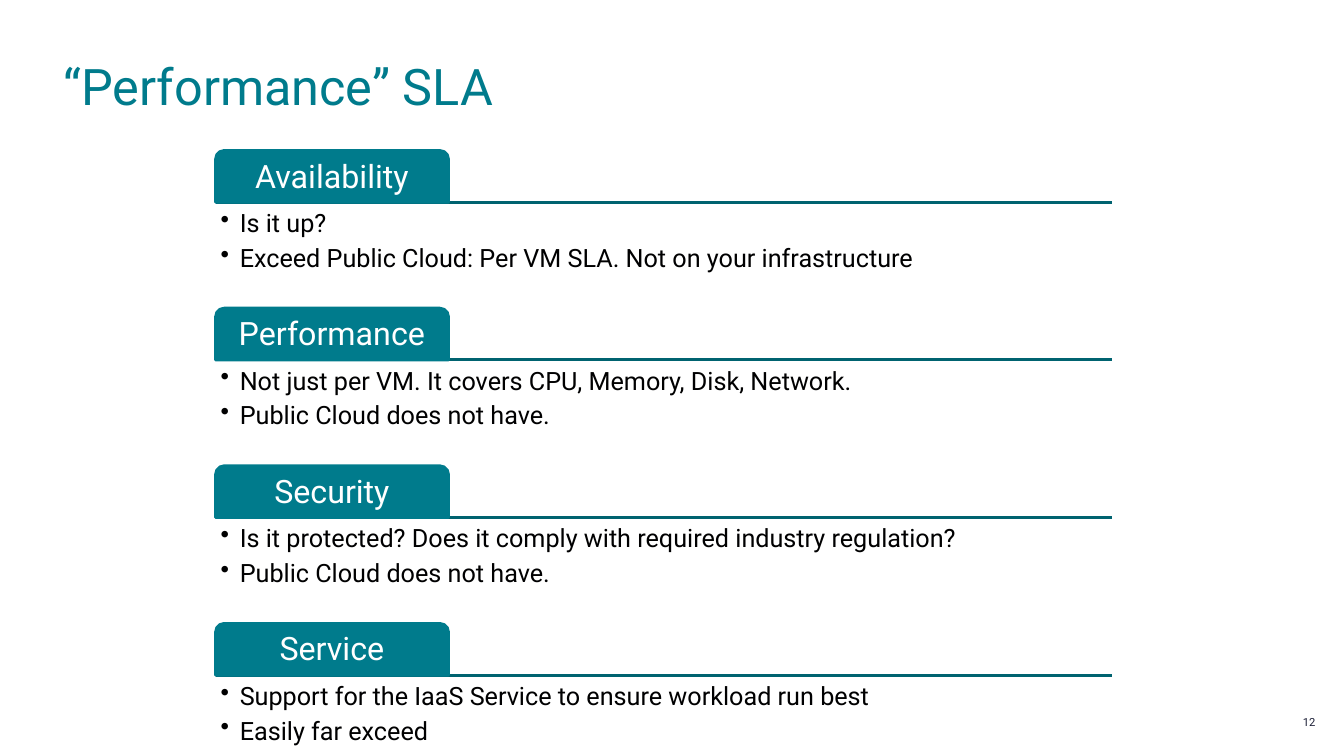
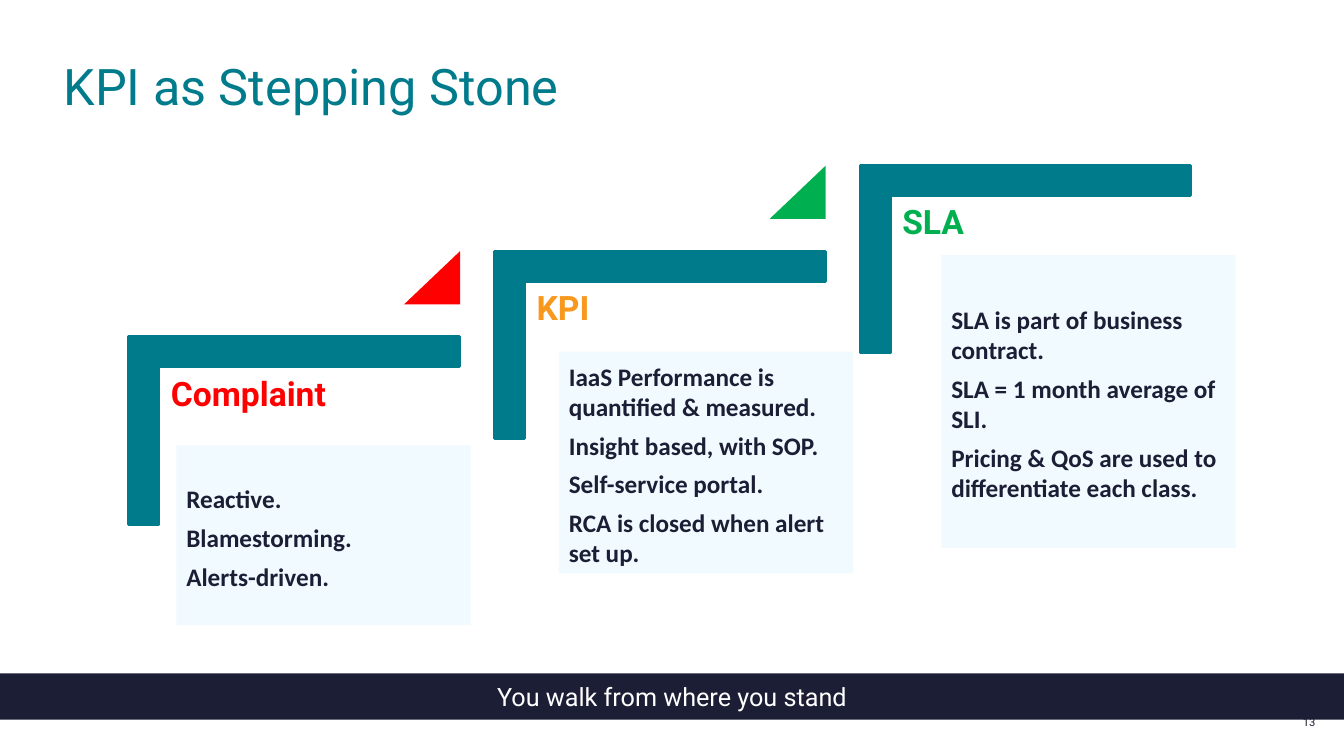
from lxml import etree
from pptx import Presentation
from pptx.dml import color
from pptx.enum import shapes, text
from pptx.oxml import ns
from pptx.util import Pt

COLORS = {
    "paper": "FFFFFF", "ink": "1B1E35", "body": "000001", "teal": "007B8C",
    "rule": "006370", "red": "FF0000", "orange": "F8981D", "green": "00B050",
    "card": "B5E6FF",
}
SLIDE_W, SLIDE_H = 960, 540
FORMS = shapes.MSO_SHAPE
ALIGN = text.PP_ALIGN
ANCHOR = text.MSO_ANCHOR

SECTIONS = [
    ("Availability", ["Is it up?",
                      "Exceed Public Cloud: Per VM SLA. Not on your infrastructure"]),
    ("Performance", ["Not just per VM. It covers CPU, Memory, Disk, Network.",
                     "Public Cloud does not have."]),
    ("Security", ["Is it protected? Does it comply with required industry regulation?",
                  "Public Cloud does not have."]),
    ("Service", ["Support for the IaaS Service to ensure workload run best",
                 "Easily far exceed"]),
]
STEPS = [
    ("Complaint", "red", (126, 318.2, 210.2, 128.4),
     ["Reactive.", "Blamestorming.", "Alerts-driven."]),
    ("KPI", "orange", (399.2, 251.2, 210.2, 158.4),
     ["IaaS Performance is quantified & measured.", "Insight based, with SOP.",
      "Self-service portal.", "RCA is closed when alert set up."]),
    ("SLA", "green", (672.4, 182.2, 210.2, 209.2),
     ["SLA is part of business contract.", "SLA = 1 month average of SLI.",
      "Pricing & QoS are used to differentiate each class."]),
]
ARROWS = ["red", "green"]


def rgb(name):
    """Return the named colour."""
    return color.RGBColor.from_string(COLORS[name])


def add_bullet(paragraph, indent):
    """Give the paragraph a hanging round bullet."""
    props = paragraph._p.get_or_add_pPr()
    props.set("marL", str(Pt(indent)))
    props.set("indent", str(-Pt(indent)))
    etree.SubElement(props, ns.qn("a:buChar")).set("char", "•")


def write(holder, lines, size=18, tone="ink", font="Roboto", bold=False,
          align=ALIGN.LEFT, anchor=ANCHOR.TOP, insets=(0, 0, 0, 0), wrap=True,
          spacing=None, before=0, after=0, bullet=0):
    """Fill a shape or text box with formatted paragraphs."""
    frame = holder.text_frame
    frame.word_wrap = wrap
    frame.vertical_anchor = anchor
    (frame.margin_left, frame.margin_top,
     frame.margin_right, frame.margin_bottom) = map(Pt, insets)
    for index, line in enumerate(lines):
        paragraph = frame.add_paragraph() if index else frame.paragraphs[0]
        paragraph.text = line
        paragraph.alignment = align
        if spacing:
            paragraph.line_spacing = spacing
        if index and before:
            paragraph.space_before = Pt(before)
        if after:
            paragraph.space_after = Pt(after)
        if bullet:
            add_bullet(paragraph, bullet)
        paragraph.font.size = Pt(size)
        paragraph.font.name = font
        paragraph.font.bold = bold
        paragraph.font.color.rgb = rgb(tone)


def add_text(slide, box, lines, **style):
    """Add a text box."""
    write(slide.shapes.add_textbox(*map(Pt, box)), lines, **style)


def add_form(slide, form, box, fill, outline=None, adjust=(), alpha=None):
    """Add a flat preset shape and return it."""
    shape = slide.shapes.add_shape(form, *map(Pt, box))
    shape.shadow.inherit = False
    shape.fill.solid()
    shape.fill.fore_color.rgb = rgb(fill)
    if alpha:
        tint = shape.fill._xPr.find(".//" + ns.qn("a:srgbClr"))
        etree.SubElement(tint, ns.qn("a:alpha")).set("val", str(alpha * 1000))
    if outline:
        shape.line.color.rgb = rgb(outline)
        shape.line.width = Pt(2)
    else:
        shape.line.fill.background()
    for index, value in enumerate(adjust):
        shape.adjustments[index] = value
    return shape


def add_rule(slide, left, top, width):
    """Draw a horizontal rule."""
    rule = slide.shapes.add_connector(
        shapes.MSO_CONNECTOR.STRAIGHT, Pt(left), Pt(top), Pt(left + width), Pt(top))
    rule.line.color.rgb = rgb("rule")
    rule.line.width = Pt(2)
    etree.SubElement(rule._element.spPr, ns.qn("a:effectLst"))


def start_slide(deck, title, number):
    """Add a blank slide with its page number and title."""
    slide = deck.slides.add_slide(deck.slide_layouts[6])
    slide.background.fill.solid()
    slide.background.fill.fore_color.rgb = rgb("paper")
    add_text(slide, (905, 509, 34.6, 14.4), [str(number)], size=8,
             align=ALIGN.RIGHT, anchor=ANCHOR.MIDDLE, wrap=False, spacing=0.9)
    add_text(slide, (45.4, 32.4, 866, 51.1), [title], size=36, tone="teal",
             anchor=ANCHOR.BOTTOM, wrap=False, spacing=0.9)
    return slide


def add_section(slide, left, top, heading, points):
    """Place a tab on a rule with bullets below it."""
    width, tab_width, tab_height = 640, 166.4, 37
    add_rule(slide, left, top + tab_height, width)
    tab = add_form(slide, FORMS.ROUND_2_SAME_RECTANGLE,
                   (left, top, tab_width, tab_height), "teal", "teal", (0.167, 0))
    write(tab, [heading], size=23, tone="paper", align=ALIGN.CENTER,
          anchor=ANCHOR.MIDDLE, spacing=0.9)
    add_text(slide, (left, top + tab_height, width, 74), points, tone="body",
             insets=(3.6,) * 4, after=3.2, bullet=13.7)


def add_step(slide, left, top, label, tone):
    """Place one stair corner with its label."""
    width, height = 236.2, 133.9
    turned = (left + (width - height) / 2, top + (height - width) / 2, height, width)
    corner = add_form(slide, FORMS.CORNER, turned, "teal", "teal", (0.161, 0.161))
    corner.rotation = 90
    add_text(slide, (left + 23, top + 21.6, 213.2, 177), [label], size=24,
             tone=tone, bold=True, insets=(7.2,) * 4, spacing=0.9)


def add_card(slide, box, lines):
    """Place a pale card of bold statements."""
    card = add_form(slide, FORMS.RECTANGLE, box, "card", alpha=20)
    write(card, lines, font="Calibri", bold=True, anchor=ANCHOR.MIDDLE,
          insets=(7.2, 6.4, 7.2, 3.6), before=6)


def build_sla(deck):
    """Build the slide of four service promises."""
    slide = start_slide(deck, "“Performance” SLA", 12)
    for index, (heading, points) in enumerate(SECTIONS):
        add_section(slide, 154, 107.5 + index * 112.6, heading, points)


def build_stairs(deck):
    """Build the slide of three rising steps."""
    slide = start_slide(deck, "KPI as Stepping Stone", 13)
    banner = add_form(slide, FORMS.RECTANGLE, (0, 481, SLIDE_W, 33), "ink")
    write(banner, ["You walk from where you stand"], tone="paper",
          align=ALIGN.CENTER, anchor=ANCHOR.MIDDLE)
    rise = 61.1
    corners = [(92 + index * 261.2, 240.5 - index * rise) for index in range(len(STEPS))]
    for (left, top), (label, tone, box, lines) in zip(corners, STEPS):
        add_step(slide, left, top, label, tone)
        add_card(slide, box, lines)
    for (left, top), tone in zip(corners, ARROWS):
        add_form(slide, FORMS.ISOSCELES_TRIANGLE,
                 (left + 196.6, top - rise, 40, 38), tone, adjust=(1,))


def main():
    """Build and save the deck."""
    deck = Presentation()
    deck.slide_width, deck.slide_height = Pt(SLIDE_W), Pt(SLIDE_H)
    build_sla(deck)
    build_stairs(deck)
    deck.save("out.pptx")


if __name__ == "__main__":
    main()
